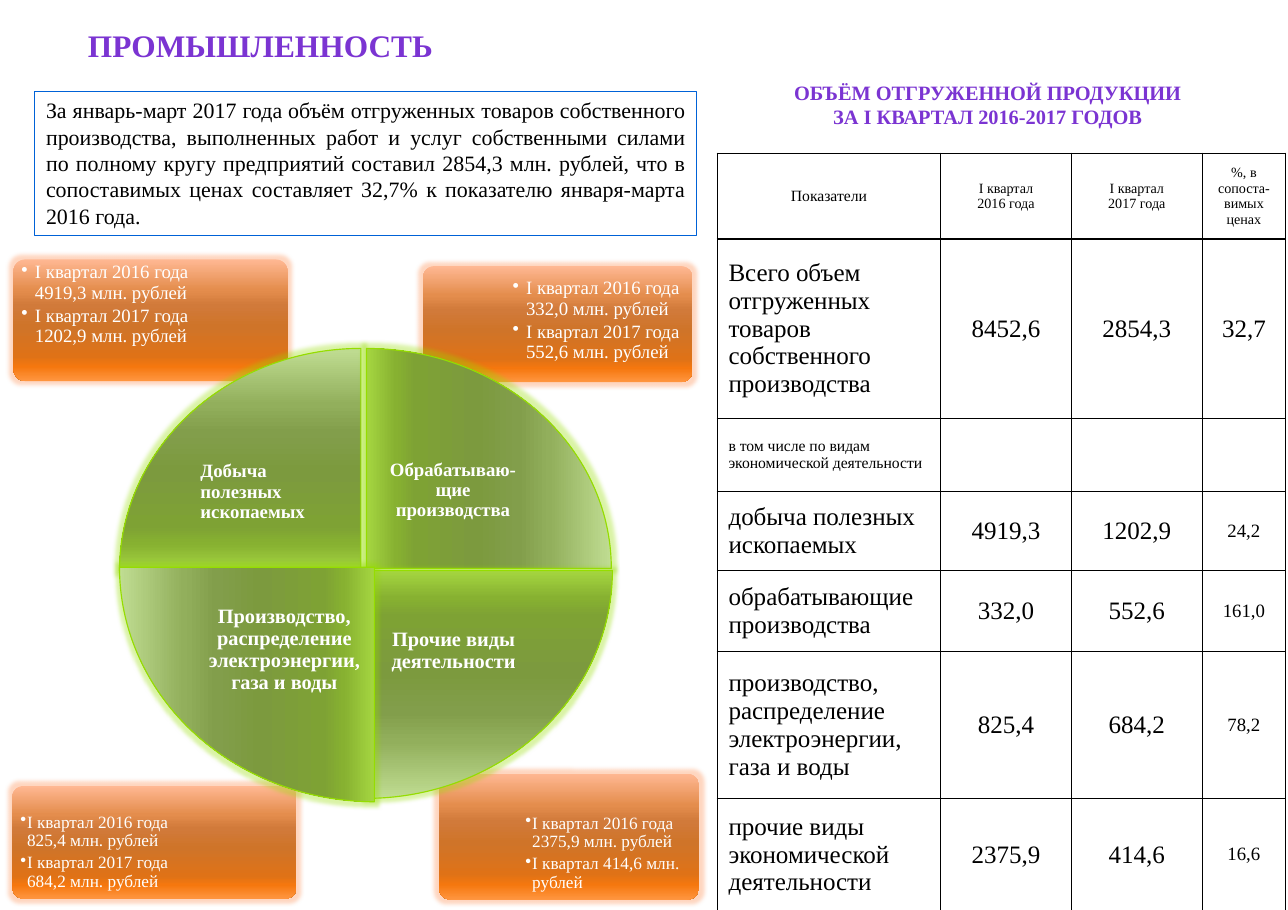
from lxml.etree import SubElement
from pptx import Presentation
from pptx.dml.color import RGBColor
from pptx.enum.shapes import MSO_SHAPE as Shape
from pptx.enum.text import MSO_ANCHOR as Anchor, MSO_AUTO_SIZE as AutoSize, PP_ALIGN as Align
from pptx.oxml.ns import qn
from pptx.util import Pt

PX = 9144
FONT = "Times New Roman"
COLORS = {"heading": "7B34D2", "text": "000000", "light": "FFFFFF", "frame": "0062D7",
          "wedge_line": "95DD00", "wedge_glow": "95DD00", "card_glow": "FF8A4A"}
STOPS = (0, 25, 38, 55, 80, 88, 100)
GRADIENTS = {
    "card": ("FFB893", "E48D4D", "D17A3A", "CF7429", "DF7217", "F5770E", "FF9640"),
    "wedge": ("C0DD92", "92AF5C", "829E4B", "7C9A3E", "7EA234", "87B131", "A5D640"),
}
INDICATORS = [
    ("Показатели", "I квартал\n2016 года", "I квартал\n2017 года", "%, в сопоста-вимых ценах"),
    ("Всего объем отгруженных товаров собственного производства", "8452,6", "2854,3", "32,7"),
    ("в том числе по видам экономической деятельности", "", "", ""),
    ("добыча полезных ископаемых", "4919,3", "1202,9", "24,2"),
    ("обрабатывающие производства", "332,0", "552,6", "161,0"),
    ("производство, распределение электроэнергии, газа и воды", "825,4", "684,2", "78,2"),
    ("прочие виды экономической деятельности", "2375,9", "414,6", "16,6"),
]
SIZES = {0: (10, 9, 9, 9), 1: (16, 16, 16, 16), 2: (10, 10, 10, 10)}
CARDS = [
    ((389, 686, 231, 112), 11, 6, ["I квартал 2016 года 2375,9 млн. рублей",
                                   "I квартал 414,6 млн. рублей"]),
    ((11, 697, 252, 100), 11, 6, ["I квартал 2016 года 825,4 млн. рублей",
                                  "I квартал 2017 года 684,2 млн. рублей"]),
    ((375, 236, 239, 103), 12, 12, ["I квартал 2016 года 332,0 млн. рублей",
                                    "I квартал 2017 года 552,6 млн. рублей"]),
    ((12, 230, 243, 108), 12, 12, ["I квартал 2016 года 4919,3 млн. рублей",
                                   "I квартал 2017 года 1202,9 млн. рублей"]),
]
WEDGES = [
    ((106, 309, 214, 197), 0, 12, Align.LEFT, "Добыча полезных ископаемых"),
    ((325, 309, 217, 195), 90, 12, Align.CENTER, "Обрабатываю-щие производства"),
    ((325, 506, 218, 202), 180, 13, Align.CENTER, "Прочие виды деятельности"),
    ((106, 503, 226, 208), 270, 13, Align.CENTER,
     "Производство, распределение электроэнергии, газа и воды"),
]


def emu(*lengths):
    return [round(n * PX) for n in lengths]


def rgb(name):
    return RGBColor.from_string(COLORS[name])


def apply(obj, values):
    for name, value in values.items():
        setattr(obj, name, value)


def write(tf, lines, size, color, para=None, bold=False, inset=(10, 5), **frame):
    x, y = emu(*inset)
    apply(tf, {"word_wrap": True, "auto_size": AutoSize.NONE, "margin_left": x,
               "margin_right": x, "margin_top": y, "margin_bottom": y, **frame})
    for i, line in enumerate(lines):
        p = tf.add_paragraph() if i else tf.paragraphs[0]
        apply(p, para or {})
        r = p.add_run()
        r.text = line
        apply(r.font, {"name": FONT, "size": Pt(size), "bold": bold})
        r.font.color.rgb = rgb(color)


def add_bullet(p, indent):
    pPr = p._p.get_or_add_pPr()
    pPr.set("marL", str(indent * PX))
    pPr.set("indent", str(-indent * PX))
    SubElement(pPr, qn("a:buChar"), char="•")


def paint(s, kind):
    s.fill.gradient()
    s.fill.gradient_angle = 270
    spPr = s._element.spPr
    stops = spPr.find(qn("a:gradFill")).find(qn("a:gsLst"))
    for old in list(stops):
        stops.remove(old)
    for pos, color in zip(STOPS, GRADIENTS[kind]):
        stop = SubElement(stops, qn("a:gs"), pos=str(pos * 1000))
        SubElement(stop, qn("a:srgbClr"), val=color)
    s.shadow.inherit = False
    glow = SubElement(spPr.find(qn("a:effectLst")), qn("a:glow"), rad=str(7 * PX))
    tint = SubElement(glow, qn("a:srgbClr"), val=COLORS[kind + "_glow"])
    SubElement(tint, qn("a:alpha"), val="35000")


def add_headings(slide, title_box, table_box):
    s = slide.shapes.title
    apply(s, dict(zip(("left", "top", "width", "height"), emu(*title_box))))
    write(s.text_frame, ["ПРОМЫШЛЕННОСТЬ"], 20, "heading", {"alignment": Align.LEFT},
          True, (11, 6), vertical_anchor=Anchor.MIDDLE)
    s = slide.shapes.add_textbox(*emu(*table_box))
    write(s.text_frame, ["ОБЪЁМ ОТГРУЖЕННОЙ ПРОДУКЦИИ", "ЗА I КВАРТАЛ 2016-2017 ГОДОВ"],
          13, "heading", {"alignment": Align.CENTER}, True, (11, 6))


def add_summary(slide, box):
    s = slide.shapes.add_shape(Shape.RECTANGLE, *emu(*box))
    s.shadow.inherit = False
    s.fill.background()
    s.line.color.rgb = rgb("frame")
    s.line.width = Pt(0.75)
    write(s.text_frame, [
        "За январь-март 2017 года объём отгруженных товаров собственного производства, "
        "выполненных работ и услуг собственными силами по полному кругу предприятий составил "
        "2854,3 млн. рублей, что в сопоставимых ценах составляет 32,7% к показателю "
        "января-марта 2016 года."], 14, "text", {"alignment": Align.JUSTIFY},
        vertical_anchor=Anchor.TOP)


def add_borders(cell):
    tcPr = cell._tc.get_or_add_tcPr()
    for i, side in enumerate(("a:lnL", "a:lnR", "a:lnT", "a:lnB")):
        line = SubElement(tcPr, qn(side), w=str(Pt(1)))
        fill = SubElement(line, qn("a:solidFill"))
        SubElement(fill, qn("a:srgbClr"), val=COLORS["text"])
        tcPr.insert(i, line)


def add_indicators(slide, box):
    table = slide.shapes.add_table(len(INDICATORS), 4, *emu(*box)).table
    apply(table, {"first_row": False, "horz_banding": False})
    for col, width in zip(table.columns, emu(198, 116, 116, 74)):
        col.width = width
    for row, height in zip(table.rows, emu(76, 159, 65, 70, 72, 130, 100)):
        row.height = height
    for i, values in enumerate(INDICATORS):
        for j, value in enumerate(values):
            cell = table.cell(i, j)
            cell.fill.background()
            cell.vertical_anchor = Anchor.MIDDLE
            add_borders(cell)
            if value:
                align = Align.LEFT if i and not j else Align.CENTER
                size = SIZES.get(i, (16, 16, 16, 12))[j]
                write(cell.text_frame, value.split("\n"), size, "text", {"alignment": align})


def add_card(slide, box, size, indent, lines):
    x, y, w, h = box
    s = slide.shapes.add_shape(Shape.ROUNDED_RECTANGLE, *emu(*box))
    s.adjustments[0] = 0.1
    s.line.fill.background()
    paint(s, "card")
    right, bottom = x > 300, y > 500
    tw, th = 0.68 * w, 0.71 * h
    left = x + w - tw - 2 if right else x + 2
    top = y + h - th - 2 if bottom else y + (12 if right else 2)
    tf = slide.shapes.add_textbox(*emu(left, top, tw, th)).text_frame
    write(tf, lines, size, "light", {"line_spacing": 0.9, "space_after": Pt(2)}, inset=(5, 5),
          vertical_anchor=Anchor.BOTTOM if bottom else Anchor.MIDDLE)
    for p in tf.paragraphs:
        add_bullet(p, indent)


def add_wedge(slide, box, angle, size, align, label):
    x, y, w, h = box
    sw, sh = (h, w) if angle % 180 else (w, h)
    s = slide.shapes.add_shape(Shape.PIE_WEDGE,
                               *emu(x + (w - sw) / 2, y + (h - sh) / 2, sw, sh))
    s.rotation = angle
    s.line.color.rgb = rgb("wedge_line")
    s.line.width = Pt(0.75)
    paint(s, "wedge")
    tw, th = 0.707 * w, 0.707 * h
    left = x if angle in (90, 180) else x + w - tw
    top = y if angle >= 180 else y + h - th
    tf = slide.shapes.add_textbox(*emu(left, top, tw, th)).text_frame
    write(tf, [label], size, "light", {"alignment": align, "line_spacing": 0.9,
                                       "space_after": Pt(4)},
          True, (9, 9), vertical_anchor=Anchor.MIDDLE)


def main():
    prs = Presentation()
    prs.slide_width, prs.slide_height = emu(1142, 807)
    slide = prs.slides.add_slide(prs.slide_layouts[5])
    add_headings(slide, (67, 14, 1028, 51), (612, 65, 527, 55))
    add_summary(slide, (31, 81, 587, 128))
    add_indicators(slide, (636, 136, 504, 672))
    for card in CARDS:
        add_card(slide, *card)
    for wedge in WEDGES:
        add_wedge(slide, *wedge)
    prs.save("out.pptx")


if __name__ == "__main__":
    main()
